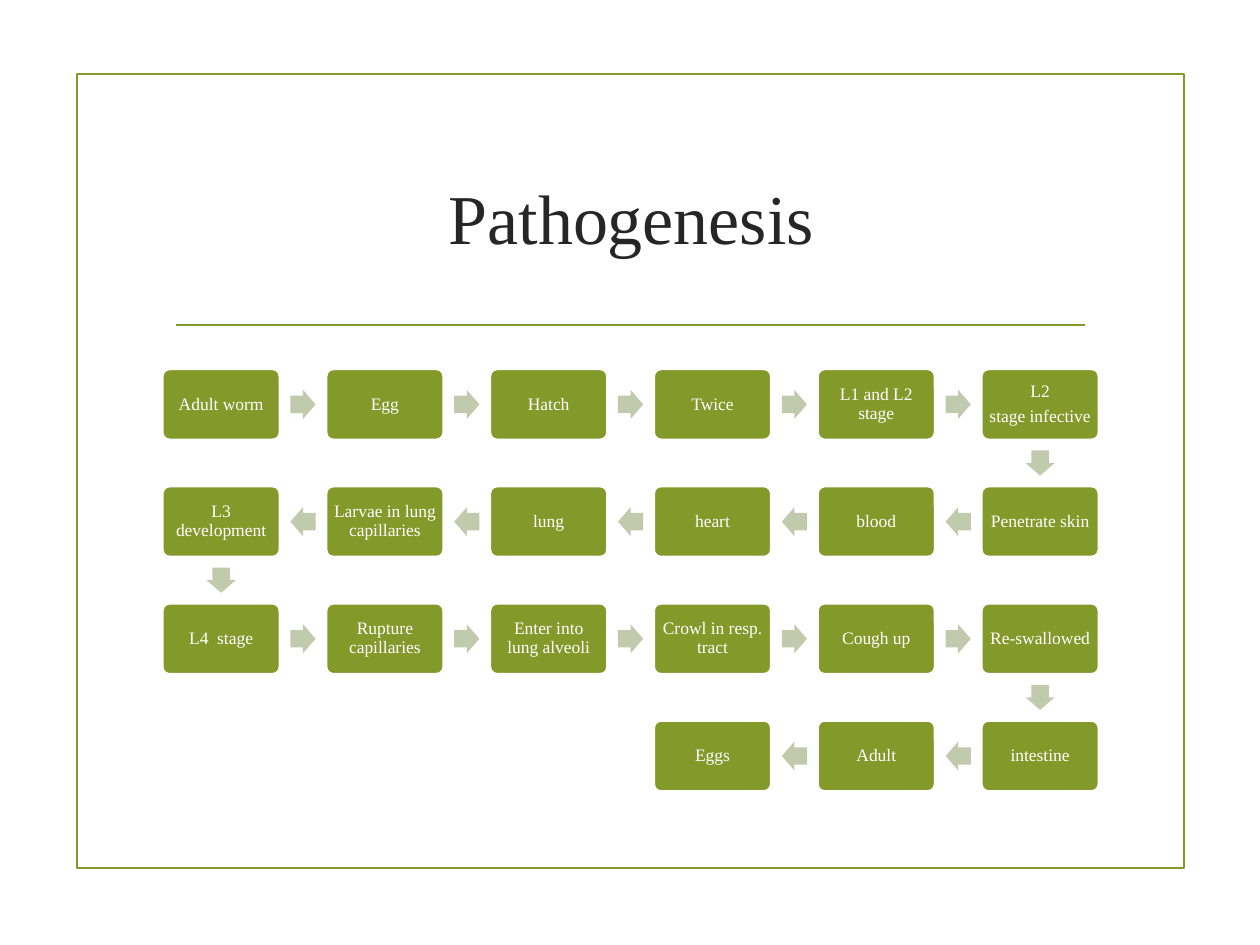
from pptx import Presentation
from pptx.dml.color import RGBColor
from pptx.enum.shapes import MSO_CONNECTOR, MSO_SHAPE
from pptx.enum.text import MSO_ANCHOR, PP_ALIGN
from pptx.oxml.ns import qn
from pptx.util import Inches, Pt
from lxml import etree

RECTANGLE, ROUNDED = MSO_SHAPE.RECTANGLE, MSO_SHAPE.ROUNDED_RECTANGLE
ARROW, STRAIGHT = MSO_SHAPE.RIGHT_ARROW, MSO_CONNECTOR.STRAIGHT
MIDDLE, CENTER = MSO_ANCHOR.MIDDLE, PP_ALIGN.CENTER

COLORS = {"green": "83992A", "arrow": "C1CAAD", "title": "262626", "white": "FFFFFF"}
FONT = "Times New Roman"

STEPS = [
    "Adult worm", "Egg", "Hatch", "Twice", "L1 and L2 stage", "L2\nstage infective",
    "Penetrate skin", "blood", "heart", "lung", "Larvae in lung capillaries", "L3 development",
    "L4  stage", "Rupture capillaries", "Enter into lung alveoli", "Crowl in resp. tract",
    "Cough up", "Re-swallowed",
    "intestine", "Adult", "Eggs",
]
COLUMNS = 6
LEFT, TOP = 1.29, 2.93
BOX_WIDTH, BOX_HEIGHT = 0.93, 0.56
COLUMN_PITCH, ROW_PITCH = 1.3, 0.93
ARROW_LENGTH, ARROW_WIDTH = 0.2, 0.23


def add_shape(kind, left, top, width, height, fill=None, line=None):
    shape = slide.shapes.add_shape(kind, Inches(left), Inches(top), Inches(width), Inches(height))
    shape.shadow.inherit = False
    if fill:
        shape.fill.solid()
        shape.fill.fore_color.rgb = RGBColor.from_string(COLORS[fill])
    else:
        shape.fill.background()
    if line:
        shape.line.color.rgb = RGBColor.from_string(COLORS[line])
        shape.line.width = Pt(1.25)
    else:
        shape.line.fill.background()
    return shape


def write_text(shape, text, size, color, inset, **paragraph_format):
    frame = shape.text_frame
    frame.text = text
    frame_format = {"word_wrap": True, "vertical_anchor": MIDDLE}
    for side in ("left", "top", "right", "bottom"):
        frame_format[f"margin_{side}"] = Inches(inset)
    for name, value in frame_format.items():
        setattr(frame, name, value)
    for paragraph in frame.paragraphs:
        for name, value in {"alignment": CENTER, **paragraph_format}.items():
            setattr(paragraph, name, value)
        for name, value in {"name": FONT, "size": Pt(size)}.items():
            setattr(paragraph.font, name, value)
        paragraph.font.color.rgb = RGBColor.from_string(COLORS[color])
    for paragraph in frame.paragraphs[:-1]:
        paragraph.space_after = Pt(4)


presentation = Presentation()
presentation.slide_width, presentation.slide_height = Inches(10), Inches(7.5)
slide = presentation.slides.add_slide(presentation.slide_layouts[6])

# Frame, rule and title
add_shape(RECTANGLE, 0.61, 0.59, 8.79, 6.3, line="green")
rule = slide.shapes.add_connector(STRAIGHT, Inches(1.4), Inches(2.58), Inches(8.61), Inches(2.58))
rule.line.color.rgb = RGBColor.from_string(COLORS["green"])
rule.line.width = Pt(1.25)
etree.SubElement(rule._element.spPr, qn("a:effectLst"))
title = slide.shapes.add_textbox(Inches(1.29), Inches(1), Inches(7.44), Inches(1.43))
write_text(title, "Pathogenesis", 40, "title", 0.05)

# The steps run right on even rows and left on odd rows
centers = []
for index, step in enumerate(STEPS):
    row, column = divmod(index, COLUMNS)
    if row % 2:
        column = COLUMNS - 1 - column
    left, top = LEFT + column * COLUMN_PITCH, TOP + row * ROW_PITCH
    box = add_shape(ROUNDED, left, top, BOX_WIDTH, BOX_HEIGHT, "green", "white")
    box.adjustments[0] = 0.1
    write_text(box, step, 10, "white", 0.04, line_spacing=0.9)
    centers.append((left + BOX_WIDTH / 2, top + BOX_HEIGHT / 2))

# An arrow midway between each step and the next
for (x, y), (next_x, next_y) in zip(centers, centers[1:]):
    arrow = add_shape(ARROW, (x + next_x - ARROW_LENGTH) / 2, (y + next_y - ARROW_WIDTH) / 2,
                      ARROW_LENGTH, ARROW_WIDTH, "arrow")
    arrow.adjustments[0], arrow.adjustments[1] = 0.6, 0.5
    if next_y > y:
        arrow.rotation = 90
    elif next_x < x:
        arrow.rotation = 180

presentation.save("out.pptx")
